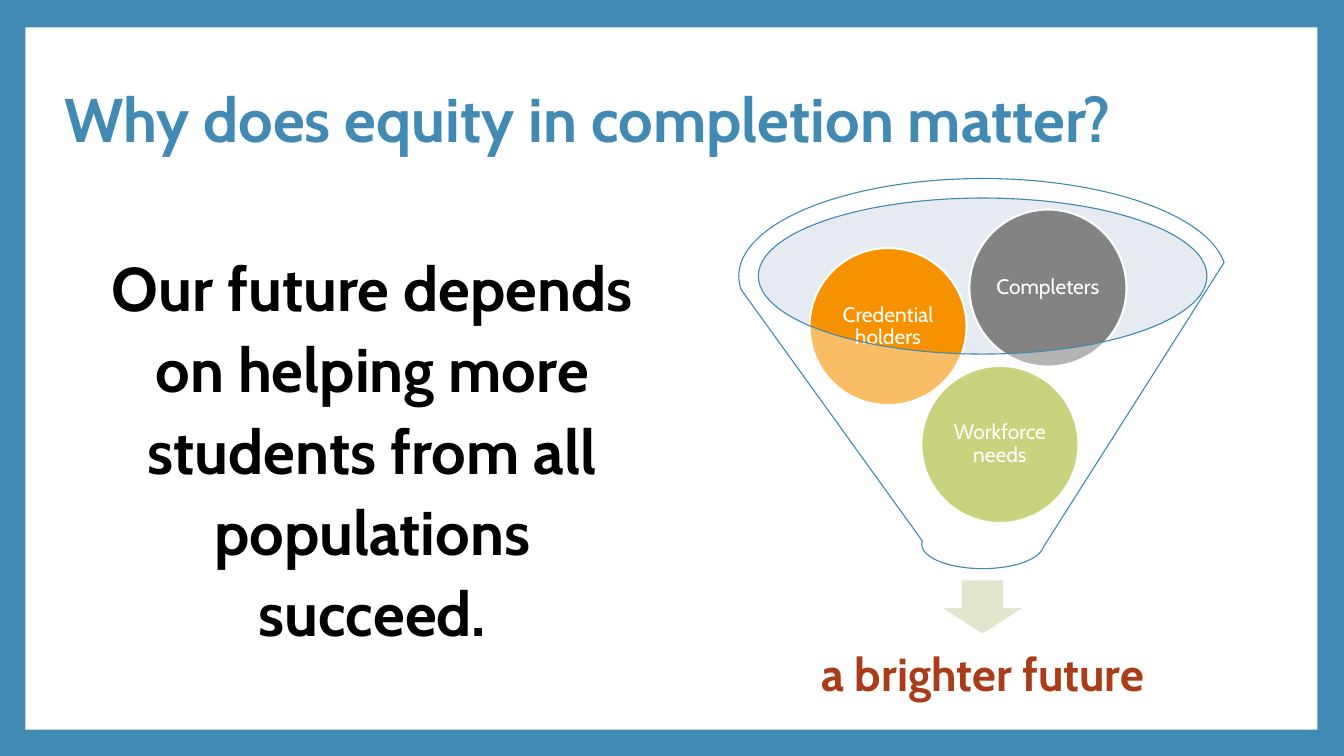
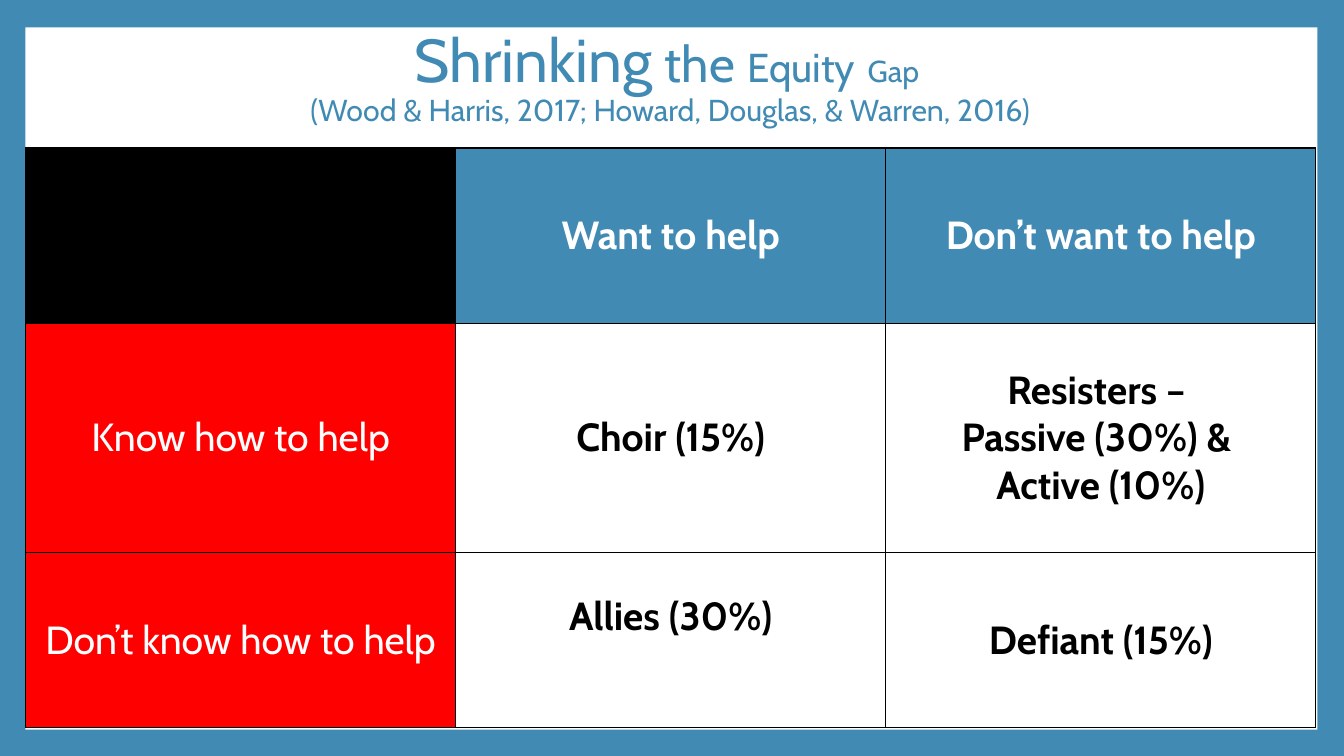
from lxml.etree import SubElement
from pptx import Presentation
from pptx.dml.color import RGBColor
from pptx.enum.shapes import MSO_SHAPE
from pptx.enum.text import MSO_ANCHOR, PP_ALIGN
from pptx.oxml import parse_xml
from pptx.oxml.ns import nsdecls, qn
from pptx.util import Cm, Pt

# Shared look
BLUE, WHITE, BLACK, RED = "418AB3", "FFFFFF", "000000", "FF0000"
FONT = "Cabin"
MIDDLE = {"vertical_anchor": MSO_ANCHOR.MIDDLE}
CENTER = {"alignment": PP_ALIGN.CENTER}
TIGHT = {"line_spacing": 0.9}


def paint(sp, fill, line=None, width=0.75, alpha=None):
    """Fill and outline a shape; alpha is the opacity in percent."""
    sp.shadow.inherit = False
    sp.fill.solid()
    sp.fill.fore_color.rgb = RGBColor.from_string(fill)
    if alpha:
        clr = sp.fill._xPr.find(qn("a:solidFill"))[0]
        SubElement(clr, qn("a:alpha")).set("val", str(alpha * 1000))
    if line:
        sp.line.color.rgb = RGBColor.from_string(line)
        sp.line.width = Pt(width)
    else:
        sp.line.fill.background()


def write(tf, lines, color, size=28, bold=False, para=CENTER, frame=None):
    """Write one paragraph per line; a line is a string or (text, size) runs."""
    for key, value in (frame or {}).items():
        setattr(tf, key, value)
    for i, line in enumerate(lines):
        p = tf.paragraphs[0] if i == 0 else tf.add_paragraph()
        for key, value in para.items():
            setattr(p, key, value)
        for text, pt in [(line, size)] if isinstance(line, str) else line:
            r = p.add_run()
            r.text = text
            for key, value in {"name": FONT, "size": Pt(pt), "bold": bold}.items():
                setattr(r.font, key, value)
            r.font.color.rgb = RGBColor.from_string(color)


prs = Presentation()
prs.slide_width, prs.slide_height = Cm(33.87), Cm(19.05)
bg = prs.slide_master.background.fill
bg.solid()
bg.fore_color.rgb = RGBColor.from_string(BLUE)

# Both slides: white panel and title
titles = [
    ((1.37, 1.22, 29.24, 3.76), ["Why does equity in completion matter?"], True, TIGHT),
    ((3.18, 0.69, 27.43, 2.62),
     [[("Shrinking", 43.2), (" ", 39.6), ("the", 36), (" ", 39.6),
       ("Equity", 28.8), (" ", 39.6), ("Gap ", 21.6)],
      [("(Wood & Harris, 2017; Howard, Douglas, & Warren, 2016)", 21.6)]],
     False, TIGHT | CENTER),
]
for box, lines, bold, para in titles:
    s = prs.slides.add_slide(prs.slide_layouts[6])
    panel = s.shapes.add_shape(MSO_SHAPE.RECTANGLE, Cm(0.64), Cm(0.69), Cm(32.56), Cm(17.7))
    paint(panel, WHITE)
    tb = s.shapes.add_textbox(*map(Cm, box))
    write(tb.text_frame, lines, BLUE, 44, bold, para, MIDDLE | {"word_wrap": True})

s, matrix = prs.slides

# Slide 1: statement
tb = s.shapes.add_textbox(Cm(2.41), Cm(5.99), Cm(13.82), Cm(10.87))
write(tb.text_frame,
      ["Our future depends on helping more students from all populations succeed."],
      BLACK, 44, True, CENTER | {"line_spacing": 1.1},
      {"word_wrap": True, "margin_left": Cm(0.38)})

# Slide 1: funnel mouth, arrow and result
sp = s.shapes.add_shape(MSO_SHAPE.OVAL, Cm(19.1), Cm(4.98), Cm(11.33), Cm(3.94))
paint(sp, "C0CFDD", alpha=40)
sp = s.shapes.add_shape(MSO_SHAPE.DOWN_ARROW, Cm(23.67), Cm(14.6), Cm(2.18), Cm(1.4))
paint(sp, "E1E6CD", WHITE, 1.5)
tb = s.shapes.add_textbox(Cm(19.5), Cm(15.72), Cm(10.54), Cm(2.64))
write(tb.text_frame, ["a brighter future"], "AB3C19", 33, True, CENTER | TIGHT,
      MIDDLE | {"word_wrap": True})

# Slide 1: balls, then the translucent funnel over them
margins = {f"margin_{side}": Cm(0.05) for side in ("left", "right", "top", "bottom")}
for text, x, y, color in [("Workforce needs", 23.22, 9.22, "A6B727"),
                          ("Credential holders", 20.4, 6.25, "F69200"),
                          ("Completers", 24.43, 5.28, "838383")]:
    sp = s.shapes.add_shape(MSO_SHAPE.OVAL, Cm(x), Cm(y), Cm(3.96), Cm(3.96))
    paint(sp, color, WHITE, 1.5)
    write(sp.text_frame, [text], WHITE, 15, para=CENTER | TIGHT,
          frame=MIDDLE | margins | {"word_wrap": True})
sp = s.shapes.add_shape(MSO_SHAPE.FUNNEL, Cm(18.62), Cm(4.5), Cm(12.29), Cm(9.83))
paint(sp, WHITE, BLUE, 0.79, alpha=40)

# Slide 2: table of (lines, fill, text colour, bold)
rows = [
    [([], BLACK, WHITE, False),
     (["Want to help"], BLUE, WHITE, True),
     (["Don’t want to help"], BLUE, WHITE, True)],
    [(["Know how to help"], RED, WHITE, False),
     (["Choir (15%)"], WHITE, BLACK, True),
     (["Resisters – ", "Passive (30%) & ", "Active (10%)"], WHITE, BLACK, True)],
    [(["Don’t know how to help"], RED, WHITE, False),
     (["Allies (30%)"], WHITE, BLACK, True),
     (["Defiant (15%)"], WHITE, BLACK, True)],
]
table = matrix.shapes.add_table(3, 3, Cm(0.64), Cm(3.73), Cm(32.52), Cm(14.6)).table
table.first_row = table.horz_banding = False
for col in table.columns:
    col.width = Cm(10.84)
for row, height in zip(table.rows, (4.42, 5.77, 4.42)):
    row.height = Cm(height)
for i, row in enumerate(rows):
    for j, (lines, fill, color, bold) in enumerate(row):
        cell = table.cell(i, j)
        cell.vertical_anchor = MSO_ANCHOR.MIDDLE
        for side in "LRTB":
            cell._tc.get_or_add_tcPr().append(parse_xml(
                f'<a:ln{side} {nsdecls("a")} w="12700"><a:solidFill>'
                f'<a:srgbClr val="{BLACK}"/></a:solidFill></a:ln{side}>'))
        cell.fill.solid()
        cell.fill.fore_color.rgb = RGBColor.from_string(fill)
        write(cell.text_frame, lines, color, bold=bold)
table.cell(2, 1).margin_bottom = Cm(1.3)  # lifts "Allies" above the middle

prs.save("out.pptx")
